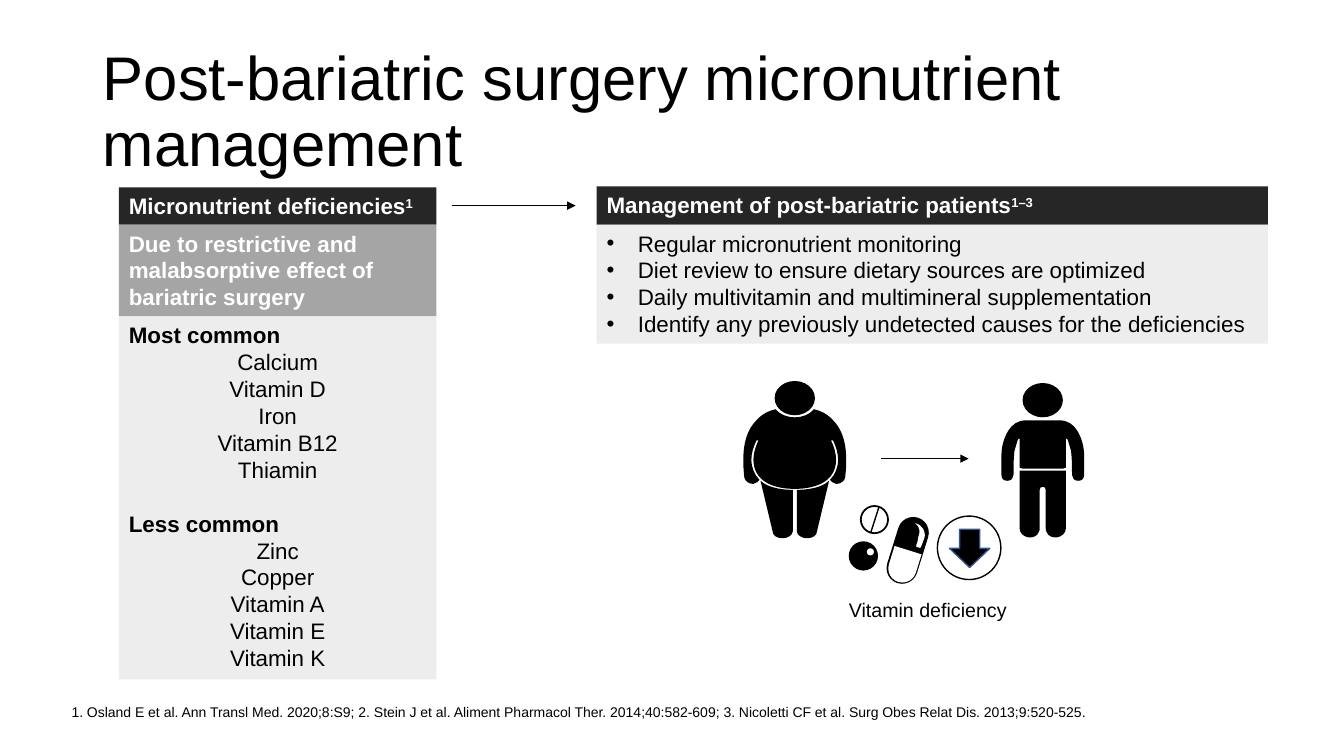
import pptx
import pptx.util
import lxml.etree
from pptx.dml.color import RGBColor
from pptx.enum.shapes import MSO_CONNECTOR, MSO_SHAPE
from pptx.enum.text import MSO_ANCHOR, MSO_AUTO_SIZE, PP_ALIGN
from pptx.oxml.ns import qn

PX = 9144  # EMU in one px, 100 px to the inch
FONT = "Arial"
BLACK = RGBColor(0x00, 0x00, 0x00)
WHITE = RGBColor(0xFF, 0xFF, 0xFF)
HEADER = RGBColor(0x26, 0x26, 0x26)
CAUSE = RGBColor(0xA5, 0xA5, 0xA5)
PANEL = RGBColor(0xED, 0xED, 0xED)
ARROW_EDGE = RGBColor(0x32, 0x54, 0x91)

# A \v is a line break within a paragraph
MOST_COMMON = ["Calcium", "Vitamin D", "Iron\vVitamin B12\vThiamin"]
LESS_COMMON = ["Zinc\vCopper", "Vitamin A", "Vitamin E", "Vitamin K"]
MANAGEMENT = [
    "Regular micronutrient monitoring",
    "Diet review to ensure dietary sources are optimized",
    "Daily multivitamin and multimineral supplementation",
    "Identify any previously undetected causes for the deficiencies",
]
SOURCES = (
    "1. Osland E et al. Ann Transl Med. 2020;8:S9; 2. Stein J et al. Aliment Pharmacol Ther. "
    "2014;40:582-609; 3. Nicoletti CF et al. Surg Obes Relat Dis. 2013;9:520-525."
)

# Outlines: a start point, then three points per curve; bodies run right of the middle axis
HEAVY_TORSO = [
    (0, 107), (22, 107), (41, 99), (41, 78), (41, 72), (39, 65), (36, 59), (38, 59), (38, 59), (38, 59),
    (41, 65), (43, 72), (43, 78), (43, 86), (40, 93), (35, 98), (36, 100), (38, 101), (41, 102),
    (42, 102), (42, 102), (42, 102), (46, 102), (49, 99), (50, 96), (53, 70), (50, 51), (38, 39),
    (31, 31), (23, 29), (19, 28), (15, 33), (8, 36), (0, 36)]
HEAVY_LEG = [
    (30, 102), (23, 106), (13, 108), (2, 108), (2, 108), (2, 149), (2, 149), (2, 153), (7, 156), (12, 156),
    (18, 156), (22, 153), (22, 149), (22, 149), (34, 99), (34, 99), (33, 100), (31, 101), (30, 102)]
SLIM_TORSO = [
    (0, 37), (6, 37), (11, 37), (16, 37), (25, 37), (30, 41), (34, 47), (39, 55), (41, 64), (41, 72),
    (41, 78), (41, 85), (41, 91), (41, 95), (39, 97), (35, 97), (31, 97), (29, 94), (29, 91),
    (29, 83), (29, 75), (28, 67), (27, 64), (26, 60), (25, 57), (25, 56), (24, 55), (23, 55),
    (23, 64), (23, 74), (23, 84), (22, 85), (21, 85), (20, 85), (13, 85), (7, 85), (0, 85)]
SLIM_LEGS = [
    (0, 87), (8, 87), (16, 87), (23, 87), (23, 106), (23, 125), (23, 144), (23, 149), (19, 152), (15, 153),
    (11, 154), (5, 152), (4, 148), (3, 147), (3, 145), (3, 144), (3, 131), (3, 118), (3, 106),
    (3, 104), (2, 103), (0, 103)]
CAPSULE_SHINE = [
    (66, 18), (73, 20), (77, 26), (75, 33), (74, 36), (73, 38), (72, 41), (72, 44), (70, 42), (69, 42),
    (68, 42), (66, 42), (67, 40), (68, 37), (69, 35), (69, 32), (71, 27), (71, 22), (66, 18)]


def emu(*lengths):
    return [int(length * PX) for length in lengths]


def paint(shape, fill, edge=None, points=1):
    shape.shadow.inherit = False
    shape.fill.solid()
    shape.fill.fore_color.rgb = fill
    if edge is None:
        shape.line.fill.background()
    else:
        shape.line.color.rgb = edge
        shape.line.width = pptx.util.Pt(points)
    return shape


def add_shape(page, kind, box, fill, edge=None, points=1, rotation=0):
    shape = paint(page.shapes.add_shape(kind, *emu(*box)), fill, edge, points)
    shape.rotation = rotation
    return shape


def add_line(page, start, end, points, arrow=False):
    line = page.shapes.add_connector(MSO_CONNECTOR.STRAIGHT, *emu(*start, *end))
    line.line.color.rgb = BLACK
    line.line.width = pptx.util.Pt(points)
    if arrow:
        lxml.etree.SubElement(line.line._get_or_add_ln(), qn("a:tailEnd"), type="triangle")
    lxml.etree.SubElement(line._element.spPr, qn("a:effectLst"))


def add_outline(page, curve, left, top, fill):
    """Draw a closed run of cubic curves."""
    places = [tuple(emu(left + x, top + y)) for x, y in curve]
    builder = page.shapes.build_freeform(*places[0])
    builder.add_line_segments(places[1:], close=True)
    outline = paint(builder.convert_to_shape(), fill)
    # Merge every three line segments into one curve
    segments = list(outline._element.iter(qn("a:lnTo")))
    for index in range(0, len(curve) - 1, 3):
        first, *others = segments[index:index + 3]
        first.tag = qn("a:cubicBezTo")
        for other in others:
            first.append(other[0])
            other.getparent().remove(other)


def mirrored(curve):
    return [(-x, y) for x, y in reversed(curve)]


def join_halves(half):
    return half + mirrored(half)[1:]


def write(shape, lines, size, color, bold=False, align=PP_ALIGN.LEFT, anchor=MSO_ANCHOR.TOP):
    frame = shape.text_frame
    frame.text = "\n".join(lines)
    frame.word_wrap = True
    frame.auto_size = MSO_AUTO_SIZE.NONE
    frame.vertical_anchor = anchor
    for para in frame.paragraphs:
        para.alignment = align
        for span in para.runs:
            style(span, size, color, bold)
    return frame


def style(span, size, color, bold):
    span.font.name = FONT
    span.font.size = pptx.util.Pt(size)
    span.font.color.rgb = color
    span.font.bold = bold


def add_header(page, box, label, references):
    bar = add_shape(page, MSO_SHAPE.RECTANGLE, box, HEADER)
    span = write(bar, [label], 16, WHITE, True).paragraphs[0].add_run()
    span.text = references
    style(span, 16, WHITE, True)
    span._r.get_or_add_rPr().set("baseline", "30000")


def add_deficiencies(page, left, top, width):
    add_header(page, (left, top, width, 37), "Micronutrient deficiencies", "1")
    cause = add_shape(page, MSO_SHAPE.RECTANGLE, (left, top + 37, width, 91), CAUSE)
    write(cause, ["Due to restrictive and malabsorptive effect of bariatric surgery"], 16, WHITE, True)
    panel = add_shape(page, MSO_SHAPE.RECTANGLE, (left, top + 128, width, 360), PANEL)
    lines = ["Most common", *MOST_COMMON, "Less common", *LESS_COMMON]
    frame = write(panel, lines, 16, BLACK, align=PP_ALIGN.CENTER)
    for para in frame.paragraphs:
        if para.text.endswith("common"):
            para.alignment = PP_ALIGN.LEFT
            para.runs[0].font.bold = True
    frame.paragraphs[1 + len(MOST_COMMON)].space_before = pptx.util.Pt(19.4)


def add_management(page, left, top, width):
    add_header(page, (left, top, width, 38), "Management of post-bariatric patients", "1–3")
    panel = add_shape(page, MSO_SHAPE.RECTANGLE, (left, top + 38, width, 118), PANEL)
    for para in write(panel, MANAGEMENT, 16, BLACK).paragraphs:
        props = para._p.get_or_add_pPr()
        props.set("marL", str(31 * PX))
        props.set("indent", str(-31 * PX))
        lxml.etree.SubElement(props, qn("a:buFont"), typeface=FONT)
        lxml.etree.SubElement(props, qn("a:buChar"), char="•")


def add_person(page, left, top, width, outlines):
    axis = left + width / 2
    add_shape(page, MSO_SHAPE.OVAL, (axis - 20, top, 40, 34), BLACK)
    for outline in outlines:
        add_outline(page, outline, axis, top, BLACK)


def add_pills(page, left, top):
    # Split tablet
    add_shape(page, MSO_SHAPE.OVAL, (left + 12, top + 1, 27, 27), WHITE, BLACK, 1.25)
    add_line(page, (left + 30, top + 2), (left + 22, top + 27), 1)
    # Round pill
    add_shape(page, MSO_SHAPE.OVAL, (left, top + 36, 29, 29), BLACK)
    add_shape(page, MSO_SHAPE.OVAL, (left + 18, top + 43, 7, 7), WHITE)
    # Capsule with a white lower half
    capsule = add_shape(page, MSO_SHAPE.ROUNDED_RECTANGLE, (left + 43, top + 11, 31, 68), BLACK, rotation=17.3)
    half = add_shape(page, MSO_SHAPE.ROUND_2_SAME_RECTANGLE, (left + 40, top + 44, 28, 33), WHITE, rotation=197.3)
    capsule.adjustments[0] = half.adjustments[0] = 0.5
    add_outline(page, CAPSULE_SHINE, left, top, WHITE)


def add_outcome(page, left, top):
    add_person(page, left, top, 105, [join_halves(HEAVY_TORSO), HEAVY_LEG, mirrored(HEAVY_LEG)])
    add_person(page, left + 257, top + 2, 83, [join_halves(SLIM_TORSO), join_halves(SLIM_LEGS)])
    add_line(page, (left + 138, top + 77), (left + 225, top + 77), 0.5, arrow=True)
    add_pills(page, left + 106, top + 123)
    add_shape(page, MSO_SHAPE.OVAL, (left + 194, top + 134, 63, 63), WHITE, BLACK)
    add_shape(page, MSO_SHAPE.DOWN_ARROW, (left + 206, top + 147, 40, 38), BLACK, ARROW_EDGE)
    caption = page.shapes.add_textbox(*emu(left + 82, top + 210, 205, 34))
    write(caption, ["Vitamin deficiency"], 14, BLACK, align=PP_ALIGN.CENTER, anchor=MSO_ANCHOR.MIDDLE)


def add_title(page, box):
    title = page.shapes.title
    title.left, title.top, title.width, title.height = emu(*box)
    frame = write(title, ["Post-bariatric surgery micronutrient management"], 44, BLACK, anchor=MSO_ANCHOR.MIDDLE)
    frame.paragraphs[0].line_spacing = 0.9


def add_sources(page, box):
    frame = write(page.shapes.add_textbox(*emu(*box)), [SOURCES], 10, BLACK, anchor=MSO_ANCHOR.BOTTOM)
    frame.margin_left = frame.margin_top = frame.margin_right = frame.margin_bottom = 0
    frame.paragraphs[0].line_spacing = 0.9


def main():
    deck = pptx.Presentation()
    deck.slide_width, deck.slide_height = emu(750 * 16 / 9, 750)
    page = deck.slides.add_slide(deck.slide_layouts[5])
    add_title(page, (92, 40, 1150, 145))
    add_sources(page, (71, 687, 1150, 28))
    add_deficiencies(page, 118, 186, 315)
    add_management(page, 592, 185, 666)
    add_line(page, (448, 204), (571, 204), 0.5, arrow=True)
    add_outcome(page, 736, 378)
    deck.save("out.pptx")


if __name__ == "__main__":
    main()
